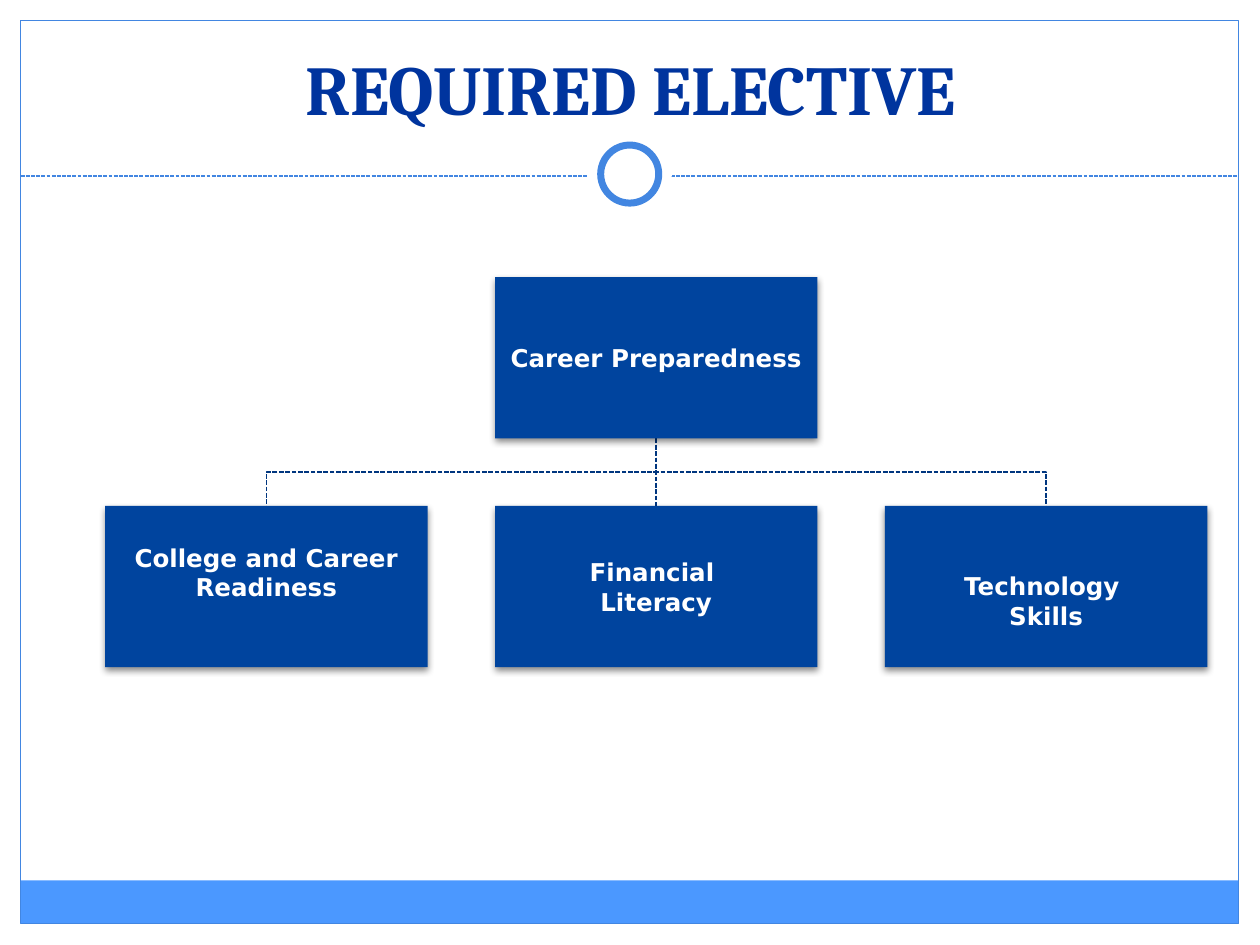
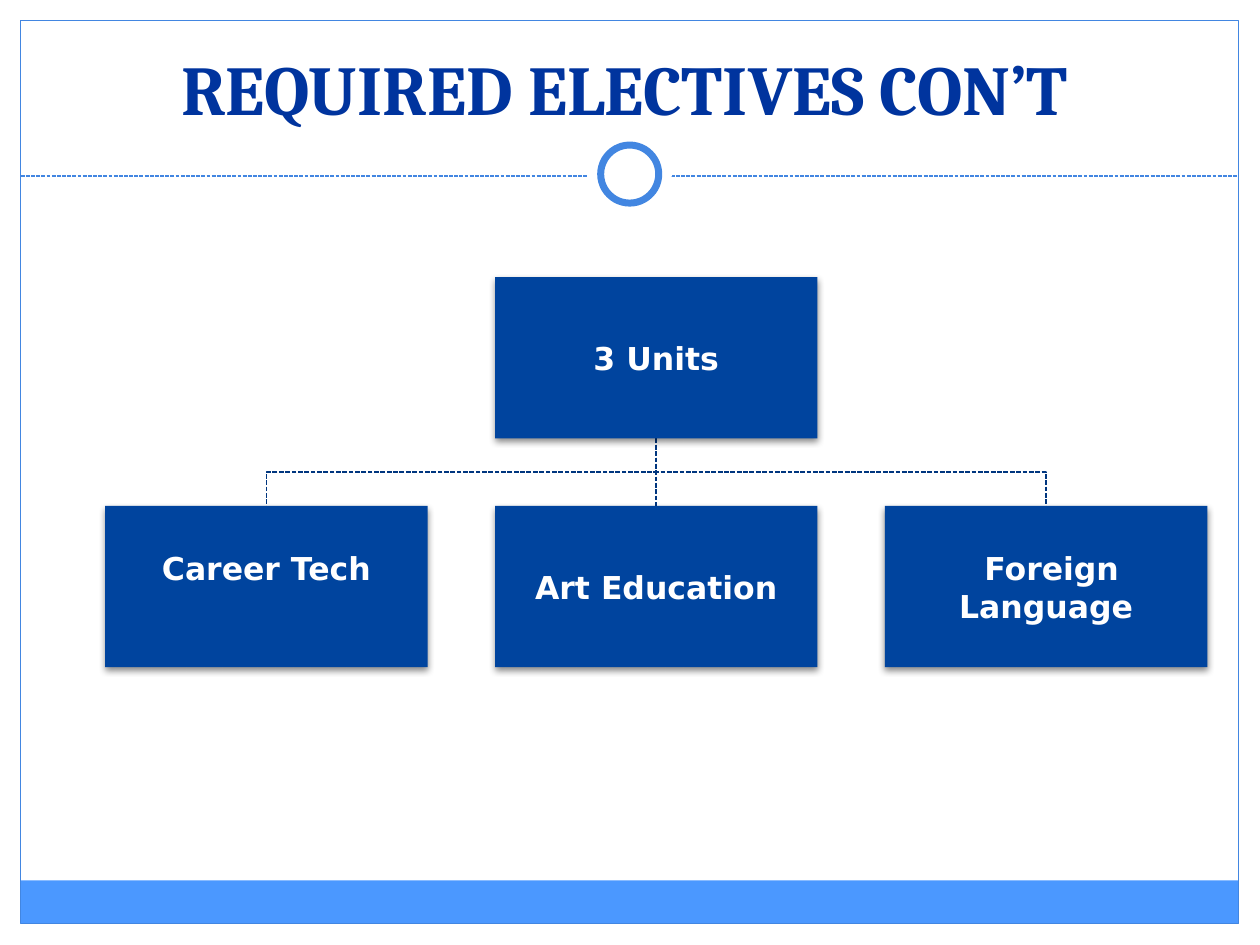
from lxml.etree import SubElement
from pptx import Presentation
from pptx.dml.color import RGBColor
from pptx.enum.dml import MSO_LINE
from pptx.enum.shapes import MSO_CONNECTOR, MSO_SHAPE
from pptx.enum.text import MSO_ANCHOR, PP_ALIGN
from pptx.oxml.ns import qn
from pptx.util import Cm, Pt

WHITE, TITLE_BLUE = "FFFFFF", "00349E"
FRAME_BLUE, BAND_BLUE = "4286E1", "4B98FF"
BOX_BLUE, BRANCH_BLUE = "00449E", "00367F"
TITLE_FONT, BOX_FONT = "Cambria", "DejaVu Sans"

FRAME = (0.42, 0.42, 24.55, 18.2)
CHART = (2.12, 5.59, 22.22, 7.86)
BOX_W, BOX_H = 6.5, 3.25
LINE_HEIGHT = 1.17

# Each box: its paragraphs, then blank lines kept free above and below them.
SLIDES = [
    {"title": "REQUIRED ELECTIVE", "title_box": (1.6, 0.84, 22.22, 1.9), "size": 14,
     "parent": (["Career Preparedness"], 0, 0),
     "children": [(["College and Career Readiness"], 0, 1),
                  (["Financial ", "Literacy"], 0, 0),
                  (["Technology ", "Skills"], 1, 0)]},
    {"title": "REQUIRED ELECTIVES CON’T", "title_box": (0.84, 0.84, 23.5, 1.9), "size": 18,
     "parent": (["3 Units"], 0, 0),
     "children": [(["Career Tech"], 0, 1),
                  (["Art Education"], 0, 0),
                  ([" Foreign Language"], 0, 0)]},
]


def rgb(value):
    return RGBColor.from_string(value)


def style_line(line, color, width, dashed=False):
    line.color.rgb = rgb(color)
    line.width = Pt(width)
    if dashed:
        line.dash_style = MSO_LINE.SQUARE_DOT


def add_plain(slide, kind, box, fill=None, outline=None, width=0.75):
    shape = slide.shapes.add_shape(kind, *map(Cm, box))
    shape.shadow.inherit = False
    if fill:
        shape.fill.solid()
        shape.fill.fore_color.rgb = rgb(fill)
    else:
        shape.fill.background()
    if outline:
        style_line(shape.line, outline, width)
    else:
        shape.line.fill.background()
    return shape


def add_dashed(slide, start, end, color, width):
    dashed = slide.shapes.add_connector(MSO_CONNECTOR.STRAIGHT, *map(Cm, start + end))
    SubElement(dashed._element.spPr, qn("a:effectLst"))
    style_line(dashed.line, color, width, dashed=True)
    # The line element must precede the effect list.
    dashed._element.spPr.append(dashed._element.spPr.find(qn("a:effectLst")))


def add_soft_shadow(shape):
    effects = shape._element.spPr.find(qn("a:effectLst"))
    shadow = SubElement(effects, qn("a:outerShdw"), blurRad=str(Pt(4)), dist=str(Pt(2)),
                        dir="5400000", rotWithShape="0")
    black = SubElement(shadow, qn("a:srgbClr"), val="000000")
    SubElement(black, qn("a:alpha"), val="45000")


def write_lines(frame, lines, font, size, color):
    frame.word_wrap = True
    for index, line in enumerate(lines):
        paragraph = frame.add_paragraph() if index else frame.paragraphs[0]
        paragraph.text = line
        paragraph.alignment = PP_ALIGN.CENTER
        paragraph.font.name = font
        paragraph.font.size = Pt(size)
        paragraph.font.bold = True
        paragraph.font.color.rgb = rgb(color)


def add_backdrop(slide, box):
    """Frame, bottom band, and dashed divider with its ring."""
    left, top, width, height = box
    band_h = 0.87
    add_plain(slide, MSO_SHAPE.RECTANGLE, (left, top + height - band_h, width, band_h), BAND_BLUE)
    add_plain(slide, MSO_SHAPE.RECTANGLE, box, outline=FRAME_BLUE)
    divider_y = top + 3.13
    add_dashed(slide, (left, divider_y), (left + width, divider_y), FRAME_BLUE, 0.75)
    center_x, center_y = left + width / 2, divider_y - 0.04
    for diameter, outline in ((1.7, None), (1.17, FRAME_BLUE)):
        ring = (center_x - diameter / 2, center_y - diameter / 2, diameter, diameter)
        add_plain(slide, MSO_SHAPE.OVAL, ring, WHITE, outline, 4)


def add_title(slide, box, title):
    frame = slide.shapes.add_textbox(*map(Cm, box)).text_frame
    frame.vertical_anchor = MSO_ANCHOR.BOTTOM
    write_lines(frame, [title], TITLE_FONT, 40, TITLE_BLUE)


def add_branch(slide, start, end):
    """Dashed line from the parent's foot to a child's head, bent halfway."""
    if start[0] == end[0]:
        add_dashed(slide, start, end, BRANCH_BLUE, 0.9)
        return
    bend_y = (start[1] + end[1]) / 2
    corners = [(start[0], bend_y), (end[0], bend_y), end]
    builder = slide.shapes.build_freeform(*map(Cm, start))
    builder.add_line_segments([tuple(map(Cm, corner)) for corner in corners], close=False)
    branch = builder.convert_to_shape()
    branch.shadow.inherit = False
    branch.fill.background()
    style_line(branch.line, BRANCH_BLUE, 0.9, dashed=True)


def add_box(slide, left, top, content, size):
    lines, blank_above, blank_below = content
    box = add_plain(slide, MSO_SHAPE.RECTANGLE, (left, top, BOX_W, BOX_H), BOX_BLUE)
    add_soft_shadow(box)
    frame = box.text_frame
    frame.vertical_anchor = MSO_ANCHOR.MIDDLE
    frame.margin_left = frame.margin_right = Cm(0.03)
    frame.margin_top = Cm(0.03) + Pt(blank_above * size * LINE_HEIGHT)
    frame.margin_bottom = Cm(0.03) + Pt(blank_below * size * LINE_HEIGHT)
    write_lines(frame, lines, BOX_FONT, size, WHITE)


def add_hierarchy(slide, box, parent, children, size):
    left, top, width, height = box
    pitch = (width - BOX_W) / (len(children) - 1)
    child_lefts = [left + index * pitch for index in range(len(children))]
    child_top = top + height - BOX_H
    parent_left = left + (width - BOX_W) / 2
    foot = (parent_left + BOX_W / 2, top + BOX_H)
    for child_left in child_lefts:
        add_branch(slide, foot, (child_left + BOX_W / 2, child_top))
    add_box(slide, parent_left, top, parent, size)
    for child_left, child in zip(child_lefts, children):
        add_box(slide, child_left, child_top, child, size)


def main():
    deck = Presentation()
    deck.slide_width, deck.slide_height = Cm(25.4), Cm(19.05)
    for content in SLIDES:
        slide = deck.slides.add_slide(deck.slide_layouts[6])
        add_backdrop(slide, FRAME)
        add_title(slide, content["title_box"], content["title"])
        add_hierarchy(slide, CHART, content["parent"], content["children"], content["size"])
    deck.save("out.pptx")


if __name__ == "__main__":
    main()
